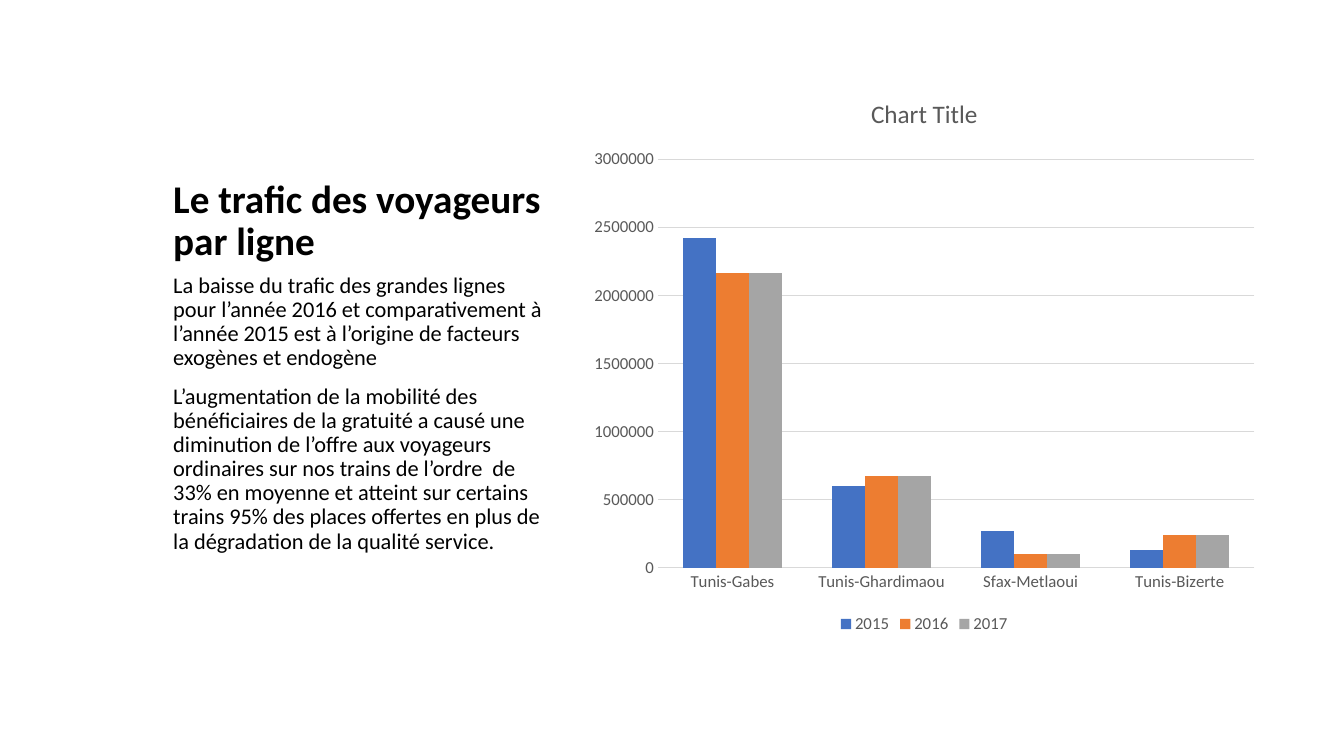
from dataclasses import dataclass

from pptx import Presentation
from pptx import util as u
from pptx.chart import chart as charts
from pptx.chart import data as chart_data
from pptx.dml import color
from pptx.enum import chart as chart_enum
from pptx.enum import text
from pptx.slide import Slide


@dataclass(frozen=True)
class Theme:
    font: str = "Calibri"
    ink: str = "000000"
    muted: str = "595959"
    grid: str = "D9D9D9"
    heading_size: float = 28
    body_size: float = 16
    chart_title_size: float = 18
    label_size: float = 12


@dataclass(frozen=True)
class TextBlock:
    top: float
    height: float
    paragraphs: tuple[str, ...]
    size: float
    bold: bool
    space_before: float
    anchor: text.MSO_ANCHOR


@dataclass(frozen=True)
class YearSeries:
    year: str
    passengers: tuple[int, ...]
    fill: str


THEME = Theme()
COLUMN_LEFT, COLUMN_WIDTH = 116.64, 279.36

COMMENTARY = (
    TextBlock(126, 66.24, ("Le trafic des voyageurs par ligne",),
              THEME.heading_size, True, 0, text.MSO_ANCHOR.BOTTOM),
    TextBlock(192.24, 144, (
        "La baisse du trafic des grandes lignes pour l’année 2016 et comparativement à "
        "l’année 2015 est à l’origine de facteurs exogènes et endogène",
        "L’augmentation de la mobilité des bénéficiaires de la gratuité a causé une "
        "diminution de l’offre aux voyageurs ordinaires sur nos trains de l’ordre  de "
        "33% en moyenne et atteint sur certains trains 95% des places offertes en plus "
        "de la dégradation de la qualité service.",
    ), THEME.body_size, False, 10, text.MSO_ANCHOR.TOP),
)

LINES = ("Tunis-Gabes", "Tunis-Ghardimaou", "Sfax-Metlaoui", "Tunis-Bizerte")
TRAFFIC = (
    YearSeries("2015", (2420000, 600000, 270000, 130000), "4472C4"),
    YearSeries("2016", (2160000, 670000, 100000, 240000), "ED7D31"),
    YearSeries("2017", (2160000, 670000, 100000, 240000), "A5A5A5"),
)


def rgb(code: str) -> color.RGBColor:
    return color.RGBColor.from_string(code)


def style_font(font, size: float, ink: str, bold: bool = False) -> None:
    font.name = THEME.font
    font.size = u.Pt(size)
    font.bold = bold
    font.color.rgb = rgb(ink)


def draw_text(slide: Slide, block: TextBlock) -> None:
    frame = slide.shapes.add_textbox(
        u.Pt(COLUMN_LEFT), u.Pt(block.top), u.Pt(COLUMN_WIDTH), u.Pt(block.height)
    ).text_frame
    frame.word_wrap = True
    frame.vertical_anchor = block.anchor
    frame.text = "\n".join(block.paragraphs)
    for paragraph in frame.paragraphs:
        paragraph.line_spacing = 0.9
        paragraph.space_before = u.Pt(block.space_before)
        for run in paragraph.runs:
            style_font(run.font, block.size, THEME.ink, block.bold)


def style_axes(chart: charts.Chart) -> None:
    for axis in (chart.category_axis, chart.value_axis):
        axis.major_tick_mark = chart_enum.XL_TICK_MARK.NONE
        axis.minor_tick_mark = chart_enum.XL_TICK_MARK.NONE
        axis.format.line.fill.background()
        style_font(axis.tick_labels.font, THEME.label_size, THEME.muted)
    passengers = chart.value_axis
    passengers.minimum_scale = 0
    passengers.maximum_scale = 3000000
    passengers.major_unit = 500000
    passengers.has_major_gridlines = True
    gridline = passengers.major_gridlines.format.line
    gridline.color.rgb = rgb(THEME.grid)
    gridline.width = u.Pt(0.75)


def draw_traffic(slide: Slide) -> None:
    traffic = chart_data.CategoryChartData(number_format="General")
    traffic.categories = LINES
    for entry in TRAFFIC:
        traffic.add_series(entry.year, entry.passengers)
    chart = slide.shapes.add_chart(
        chart_enum.XL_CHART_TYPE.COLUMN_CLUSTERED,
        u.Pt(414.72), u.Pt(54), u.Pt(491.04), u.Pt(401.76), traffic,
    ).chart
    style_font(chart.font, THEME.label_size, THEME.muted)

    chart.has_title = True
    heading = chart.chart_title.text_frame
    heading.text = "Chart Title"
    style_font(heading.paragraphs[0].runs[0].font, THEME.chart_title_size, THEME.muted)
    chart.chart_title.include_in_layout = False

    chart.has_legend = True
    chart.legend.position = chart_enum.XL_LEGEND_POSITION.BOTTOM
    chart.legend.include_in_layout = False
    style_font(chart.legend.font, THEME.label_size, THEME.muted)

    style_axes(chart)
    columns = chart.plots[0]
    columns.vary_by_categories = False
    columns.gap_width = 150
    columns.overlap = 0
    for series, entry in zip(columns.series, TRAFFIC):
        series.format.fill.solid()
        series.format.fill.fore_color.rgb = rgb(entry.fill)


def main() -> None:
    deck = Presentation()
    deck.slide_width, deck.slide_height = u.Pt(960), u.Pt(540)
    slide = deck.slides.add_slide(deck.slide_layouts[6])
    for block in COMMENTARY:
        draw_text(slide, block)
    draw_traffic(slide)
    deck.save("out.pptx")


if __name__ == "__main__":
    main()
